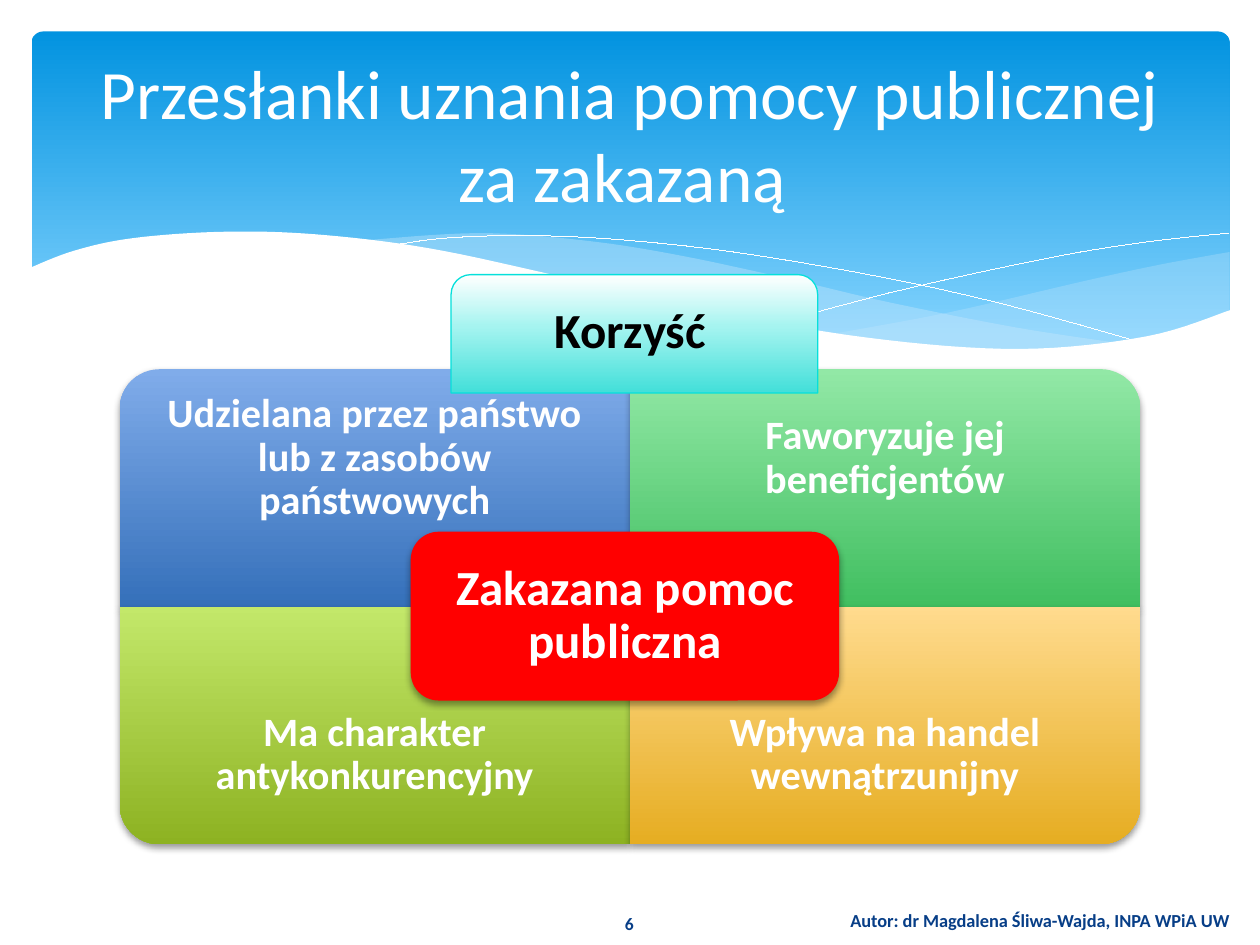
from dataclasses import dataclass
from typing import NamedTuple

from lxml import etree
from pptx import Presentation
from pptx.dml.color import RGBColor
from pptx.enum.shapes import MSO_SHAPE
from pptx.enum.text import MSO_ANCHOR, MSO_AUTO_SIZE, PP_ALIGN
from pptx.oxml.ns import qn
from pptx.util import Inches, Pt

CENTER, LEFT = PP_ALIGN.CENTER, PP_ALIGN.LEFT
MIDDLE, TOP = MSO_ANCHOR.MIDDLE, MSO_ANCHOR.TOP
NO_AUTOFIT = MSO_AUTO_SIZE.NONE
ROUND_RECT = MSO_SHAPE.ROUNDED_RECTANGLE
ONE_ROUND_CORNER = MSO_SHAPE.ROUND_1_RECTANGLE
TWO_ROUND_CORNERS = MSO_SHAPE.ROUND_2_SAME_RECTANGLE


@dataclass(frozen=True)
class Theme:
    """Colours, gradients as (percent, colour) stops, and type sizes in points."""
    font: str = "Calibri"
    white: str = "FFFFFF"
    black: str = "000000"
    navy: str = "073E87"
    red: str = "FF0000"
    mist: str = "C6E7FC"
    turquoise: str = "05E0DB"
    header: tuple = ((0, "0293E0"), (90, "83D3FE"))
    benefit: tuple = ((0, "FFFFFF"), (44, "A5F4F0"), (100, "42DFD9"))
    blue: tuple = ((0, "80ACEA"), (100, "3570BA"))
    green: tuple = ((0, "92E8A6"), (100, "41BF60"))
    lime: tuple = ((0, "C3E86A"), (100, "8DB222"))
    amber: tuple = ((0, "FFDB8E"), (100, "E6AD22"))
    title_size: float = 39.6
    key_size: float = 28
    quadrant_size: float = 23
    author_size: float = 10.5
    number_size: float = 10


class Box(NamedTuple):
    """A place on the page, in inches."""
    left: float
    top: float
    width: float
    height: float

    def lengths(self):
        return [Inches(value) for value in self]

    def shrunk(self, gap):
        return Box(self.left + gap, self.top + gap, self.width - 2 * gap, self.height - 2 * gap)

    def turned(self):
        """Swap width and height about the same centre."""
        shift = (self.width - self.height) / 2
        return Box(self.left + shift, self.top - shift, self.height, self.width)


THEME = Theme()

HEADER_BOX = Box(0.25, 0.25, 9.51, 2.7)
TITLE_BOX = Box(0.5, 0.37, 9, 1.37)
MATRIX_BOX = Box(0.95, 2.93, 8.1, 3.77)
CENTER_BOX = Box(3.26, 4.22, 3.4, 1.34)
BENEFIT_BOX = Box(3.58, 2.18, 2.91, 0.94)
BENEFIT_TEXT_BOX = Box(3.74, 2.33, 2.52, 0.57)
NUMBER_BOX = Box(4.36, 7.16, 1.27, 0.34)
AUTHOR_BOX = Box(6.65, 7.1, 3.35, 0.4)

# Rows of the matrix, each with its cells from left to right
MATRIX = [
    [("Udzielana przez państwo lub z zasobów państwowych", THEME.blue),
     ("Faworyzuje jej beneficjentów", THEME.green)],
    [("Ma charakter antykonkurencyjny", THEME.lime),
     ("Wpływa na handel wewnątrzunijny", THEME.amber)],
]
# Turns that bring the round corner of a cell to the outside, laid out like MATRIX
OUTER_CORNER_TURNS = [[270, 0], [180, 90]]
CELL_TEXT_SHARE = 0.75

# Anchor points of the header's curves, in inches; smooth() fills in between
RIGHT_WAVE_CREST = [(9.76, 2), (9.21, 2.1), (8.61, 2.23), (7.53, 2.48), (6.61, 2.65)]
RIGHT_WAVE_BASE = [(6.61, 2.65), (7.19, 2.72), (8.03, 2.78), (8.72, 2.74), (9.35, 2.62), (9.76, 2.47)]
LONG_WAVE_CREST = [(8.93, 2.73), (8.07, 2.6), (7.06, 2.4), (6.29, 2.22),
                   (5.41, 2.03), (4.65, 1.91), (3.8, 1.85), (2.86, 1.91)]
LONG_WAVE_BASE = [(2.86, 1.91), (3.62, 2.03), (4.49, 2.22), (5.66, 2.48),
                  (6.65, 2.66), (7.48, 2.76), (8.18, 2.78), (8.93, 2.73)]
FALLING_LINE = [(3.09, 1.95), (3.53, 1.89), (4.16, 1.87), (4.89, 1.9),
                (5.82, 2), (6.95, 2.19), (7.95, 2.41), (9.07, 2.72)]
RISING_LINE = [(6.13, 2.57), (7.2, 2.29), (8.36, 2.04), (9.1, 1.92), (9.75, 1.85)]
PAPER_CREST = [(9.77, 2.46), (9.1, 2.67), (8.09, 2.77), (6.88, 2.68), (5.55, 2.45), (4.47, 2.2),
               (3.4, 1.97), (2.5, 1.86), (1.77, 1.84), (1.06, 1.89), (0.59, 1.99), (0.23, 2.13)]
PAPER_BASE = [(0.23, 3.29), (9.77, 3.29)]
STEPS_PER_SPAN = 8


def smooth(anchors):
    """Return points on a Catmull-Rom curve through the anchors."""
    padded = [anchors[0], *anchors, anchors[-1]]
    points = [anchors[0]]
    for before, start, end, after in zip(padded, padded[1:], padded[2:], padded[3:]):
        for step in range(1, STEPS_PER_SPAN + 1):
            t = step / STEPS_PER_SPAN
            points.append(tuple(
                b + ((c - a) * t + (2 * a - 5 * b + 4 * c - d) * t ** 2
                     + (3 * b - a - 3 * c + d) * t ** 3) / 2
                for a, b, c, d in zip(before, start, end, after)))
    return points


def fill_solid(shape, color, opacity=100):
    shape.fill.solid()
    shape.fill.fore_color.rgb = RGBColor.from_string(color)
    if opacity < 100:
        swatch = shape._element.spPr.find(qn("a:solidFill"))[0]
        etree.SubElement(swatch, qn("a:alpha"), val=str(opacity * 1000))


def fill_gradient(shape, stops):
    """Fill downwards, whatever the rotation of the shape."""
    shape.fill.gradient()
    shape.fill.gradient_angle = 270
    gradient = shape._element.spPr.find(qn("a:gradFill"))
    gradient.set("rotWithShape", "0")
    stop_list = gradient.find(qn("a:gsLst"))
    for old_stop in list(stop_list):
        stop_list.remove(old_stop)
    for percent, color in stops:
        stop = etree.SubElement(stop_list, qn("a:gs"), pos=str(percent * 1000))
        etree.SubElement(stop, qn("a:srgbClr"), val=color)


def add_soft_shadow(shape):
    effects = shape._element.spPr.find(qn("a:effectLst"))
    shadow = etree.SubElement(effects, qn("a:outerShdw"), blurRad=str(Pt(4)),
                              dist=str(Pt(2)), dir="5400000", rotWithShape="0")
    color = etree.SubElement(shadow, qn("a:srgbClr"), val=THEME.black)
    etree.SubElement(color, qn("a:alpha"), val="38000")


def make_plain(shape):
    """Take away the default shadow and outline."""
    shape.shadow.inherit = False
    shape.line.fill.background()
    return shape


def add_panel(page, kind, box):
    return make_plain(page.shapes.add_shape(kind, *box.lengths()))


def add_outline(page, points, closed=True):
    # The builder rounds to whole units, so it is given EMU rather than inches
    start, *others = [(Inches(x), Inches(y)) for x, y in points]
    builder = page.shapes.build_freeform(*start)
    builder.add_line_segments(others, close=closed)
    return make_plain(builder.convert_to_shape())


def add_hairline(page, anchors):
    curve = add_outline(page, smooth(anchors), closed=False)
    curve.fill.background()
    curve.line.color.rgb = RGBColor.from_string(THEME.white)
    # The width property drops a zero, which would give the default width
    curve._element.spPr.find(qn("a:ln")).set("w", "0")


def write(frame, text, size, color, bold=True, align=CENTER, anchor=MIDDLE):
    frame.word_wrap = True
    frame.auto_size = NO_AUTOFIT
    frame.vertical_anchor = anchor
    para = frame.paragraphs[0]
    para.alignment = align
    span = para.add_run()
    span.text = text
    span.font.name, span.font.size, span.font.bold = THEME.font, Pt(size), bold
    span.font.color.rgb = RGBColor.from_string(color)


def add_label(page, box, text, size, color, **style):
    frame = page.shapes.add_textbox(*box.lengths()).text_frame
    write(frame, text, size, color, **style)
    return frame


def add_diagram_label(page, box, text, size, inset):
    """Add white text with equal margins and tight lines."""
    frame = add_label(page, box, text, size, THEME.white)
    frame.margin_left = frame.margin_right = Inches(inset)
    frame.margin_top = frame.margin_bottom = Inches(inset)
    frame.paragraphs[0].line_spacing = 0.9


def add_header(page):
    band = add_panel(page, ROUND_RECT, HEADER_BOX)
    band.adjustments[0] = 0.034
    fill_gradient(band, THEME.header)
    for crest, base, opacity in [(RIGHT_WAVE_CREST, RIGHT_WAVE_BASE, 29),
                                 (LONG_WAVE_CREST, LONG_WAVE_BASE, 40)]:
        fill_solid(add_outline(page, smooth(crest) + smooth(base)), THEME.mist, opacity)
    for anchors in (FALLING_LINE, RISING_LINE):
        add_hairline(page, anchors)
    fill_solid(add_outline(page, smooth(PAPER_CREST) + PAPER_BASE), THEME.white)


def add_title(page):
    title = page.shapes.title
    title.left, title.top, title.width, title.height = TITLE_BOX.lengths()
    write(title.text_frame, "Przesłanki uznania pomocy publicznej za zakazaną ",
          THEME.title_size, THEME.white, bold=False)
    page.shapes._spTree.append(title._element)  # in front of the header


def add_cell(page, cell, turn, text_box, text, stops):
    panel = add_panel(page, ONE_ROUND_CORNER, cell.turned() if turn % 180 else cell)
    panel.rotation = turn
    fill_gradient(panel, stops)
    add_soft_shadow(panel)
    add_diagram_label(page, text_box, text, THEME.quadrant_size, inset=0.18)


def add_matrix(page):
    width, height = MATRIX_BOX.width / 2, MATRIX_BOX.height / 2
    text_height = height * CELL_TEXT_SHARE
    for row, (cells, turns) in enumerate(zip(MATRIX, OUTER_CORNER_TURNS)):
        for column, ((text, stops), turn) in enumerate(zip(cells, turns)):
            cell = Box(MATRIX_BOX.left + column * width, MATRIX_BOX.top + row * height, width, height)
            # Text keeps to the outer edge: the top of row 0, the bottom of row 1
            text_top = cell.top + row * (height - text_height)
            text_box = cell._replace(top=text_top, height=text_height)
            add_cell(page, cell, turn, text_box, text, stops)


def add_center(page):
    panel = add_panel(page, ROUND_RECT, CENTER_BOX)
    fill_solid(panel, THEME.red)
    add_soft_shadow(panel)
    add_diagram_label(page, CENTER_BOX.shrunk(0.06), "Zakazana pomoc publiczna",
                      THEME.key_size, inset=0.12)


def add_benefit(page):
    tab = add_panel(page, TWO_ROUND_CORNERS, BENEFIT_BOX)
    fill_gradient(tab, THEME.benefit)
    tab.line.color.rgb = RGBColor.from_string(THEME.turquoise)
    tab.line.width = Pt(0.75)
    add_label(page, BENEFIT_TEXT_BOX, "Korzyść", THEME.key_size, THEME.black, anchor=TOP)


def add_footer(page):
    add_label(page, NUMBER_BOX, "6", THEME.number_size, THEME.navy)
    add_label(page, AUTHOR_BOX, "Autor: dr Magdalena Śliwa-Wajda, INPA WPiA UW",
              THEME.author_size, THEME.navy, align=LEFT)


def main():
    deck = Presentation()
    deck.slide_width, deck.slide_height = Inches(10), Inches(7.5)
    title_only = deck.slide_layouts[5]
    page = deck.slides.add_slide(title_only)
    for add_part in (add_header, add_matrix, add_center, add_title, add_footer, add_benefit):
        add_part(page)
    deck.save("out.pptx")


if __name__ == "__main__":
    main()
